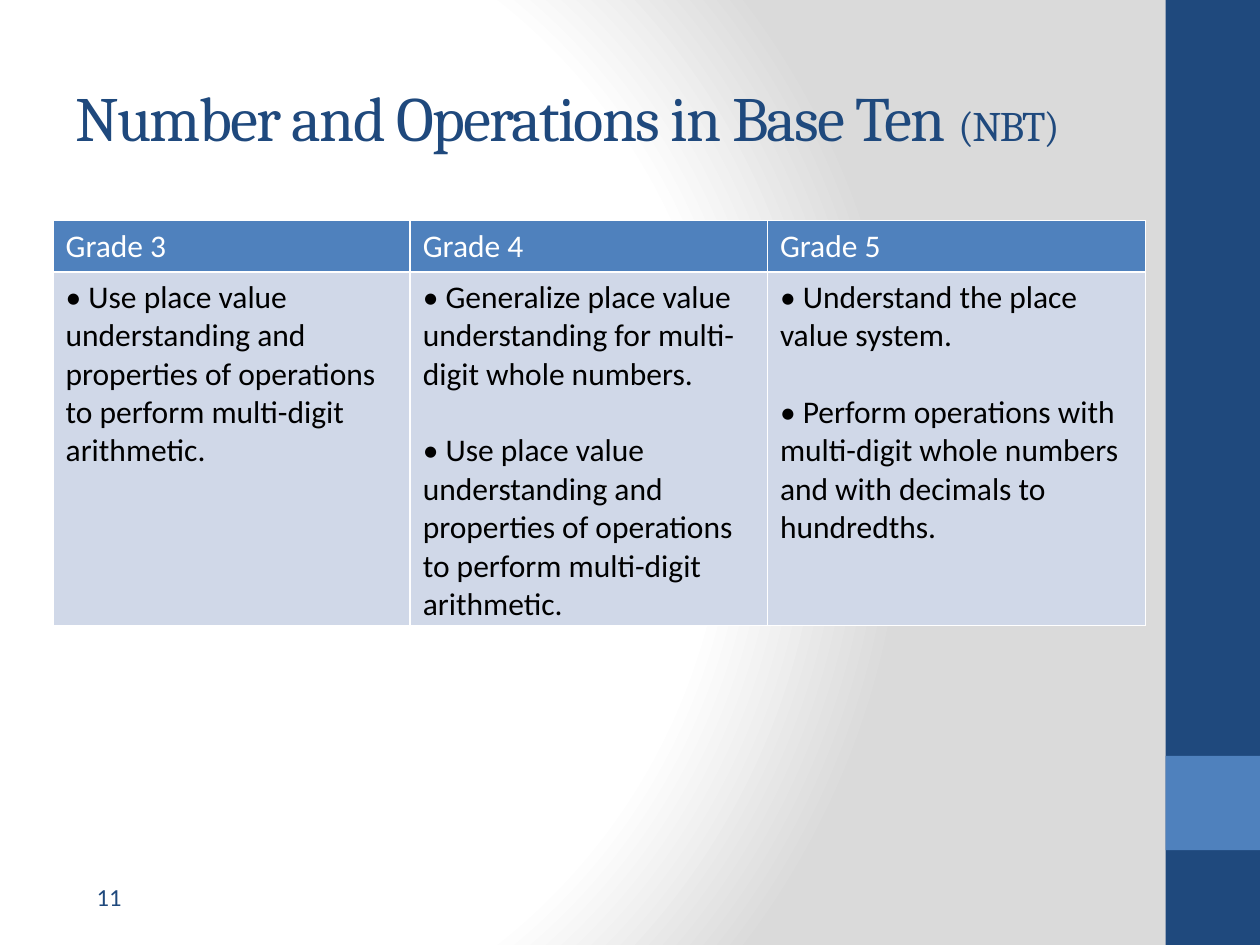
from pptx import Presentation
from pptx.dml.color import RGBColor
from pptx.enum.shapes import MSO_SHAPE
from pptx.enum.text import MSO_ANCHOR
from pptx.oxml import parse_xml
from pptx.oxml.ns import nsdecls
from pptx.util import Cm, Pt

NAVY, BLUE, PALE, WHITE, BLACK = "1F497D", "4F81BD", "D0D8E8", "FFFFFF", "000000"
COLUMN_WIDTHS = (7.2, 7.2, 7.62)
ROW_HEIGHTS = (1.03, 7.13)
OPERATIONS = ("• Use place value understanding and properties of operations "
              "to perform multi-digit arithmetic.")
GRADES = {
    "Grade 3": [OPERATIONS],
    "Grade 4": ["• Generalize place value understanding for multi-digit whole numbers.",
                OPERATIONS],
    "Grade 5": ["• Understand the place value system.",
                "• Perform operations with multi-digit whole numbers "
                "and with decimals to hundredths."],
}


def color(value):
    return RGBColor.from_string(value)


def set_background(slide):
    stops = "".join(
        f'<a:gs pos="{position * 1000}"><a:srgbClr val="{value}"/></a:gs>'
        for position, value in ((0, WHITE), (75, WHITE), (100, "DADADA")))
    background = parse_xml(
        f'<p:bg {nsdecls("p", "a")}><p:bgPr><a:gradFill rotWithShape="1">'
        f'<a:gsLst>{stops}</a:gsLst><a:path path="circle">'
        '<a:fillToRect l="20000" t="50000" r="100000" b="50000"/></a:path>'
        '</a:gradFill><a:effectLst/></p:bgPr></p:bg>')
    slide.element.cSld.insert(0, background)


def add_band(slide, top, height, fill):
    shape = slide.shapes.add_shape(
        MSO_SHAPE.RECTANGLE, Cm(23.5), Cm(top), Cm(1.9), Cm(height))
    shape.shadow.inherit = False
    shape.fill.solid()
    shape.fill.fore_color.rgb = color(fill)
    shape.line.fill.background()


def format_run(run, size, font_name, value):
    run.font.size = Pt(size)
    run.font.name = font_name
    run.font.color.rgb = color(value)


def add_text(slide, position, runs, font_name, anchor=MSO_ANCHOR.TOP, spacing=0):
    shape = slide.shapes.add_textbox(*map(Cm, position))
    text_frame = shape.text_frame
    text_frame.word_wrap = True
    text_frame.vertical_anchor = anchor
    for text, size in runs:
        run = text_frame.paragraphs[0].add_run()
        run.text = text
        format_run(run, size, font_name, NAVY)
        if spacing:
            run.font._element.set("spc", str(spacing * 100))


def add_borders(cell):
    properties = cell._tc.get_or_add_tcPr()
    for side in "LRTB":
        properties.append(parse_xml(
            f'<a:ln{side} {nsdecls("a")} w="12700"><a:solidFill>'
            f'<a:srgbClr val="{WHITE}"/></a:solidFill></a:ln{side}>'))


def fill_cell(cell, lines, fill, text_color):
    add_borders(cell)
    cell.fill.solid()
    cell.fill.fore_color.rgb = color(fill)
    cell.text_frame.text = "\n".join(lines)
    for index, paragraph in enumerate(cell.text_frame.paragraphs):
        paragraph.space_before = Pt(22 if index else 0)
        format_run(paragraph.runs[0], 18, "Calibri", text_color)


def add_grade_table(slide):
    table = slide.shapes.add_table(
        len(ROW_HEIGHTS), len(GRADES), Cm(1.07), Cm(4.45),
        Cm(sum(COLUMN_WIDTHS)), Cm(sum(ROW_HEIGHTS))).table
    for row, height in zip(table.rows, ROW_HEIGHTS):
        row.height = Cm(height)
    for index, (grade, standards) in enumerate(GRADES.items()):
        table.columns[index].width = Cm(COLUMN_WIDTHS[index])
        fill_cell(table.cell(0, index), [grade], BLUE, WHITE)
        fill_cell(table.cell(1, index), standards, PALE, BLACK)


def main():
    """Build the slide on grade 3 to 5 number standards."""
    presentation = Presentation()
    presentation.slide_width, presentation.slide_height = Cm(25.4), Cm(19.05)
    slide = presentation.slides.add_slide(presentation.slide_layouts[6])
    set_background(slide)
    add_band(slide, 0, 19.05, NAVY)
    add_band(slide, 15.24, 1.9, BLUE)
    add_text(slide, (1.27, 0.76, 21.16, 3.18),
             [("Number and Operations in Base Ten ", 36), ("(NBT)", 24)],
             "Cambria", MSO_ANCHOR.MIDDLE, spacing=-1)
    add_grade_table(slide)
    add_text(slide, (1.7, 17.65, 5.5, 1.02), [("11", 14)], "Calibri")
    presentation.save("out.pptx")


if __name__ == "__main__":
    main()
